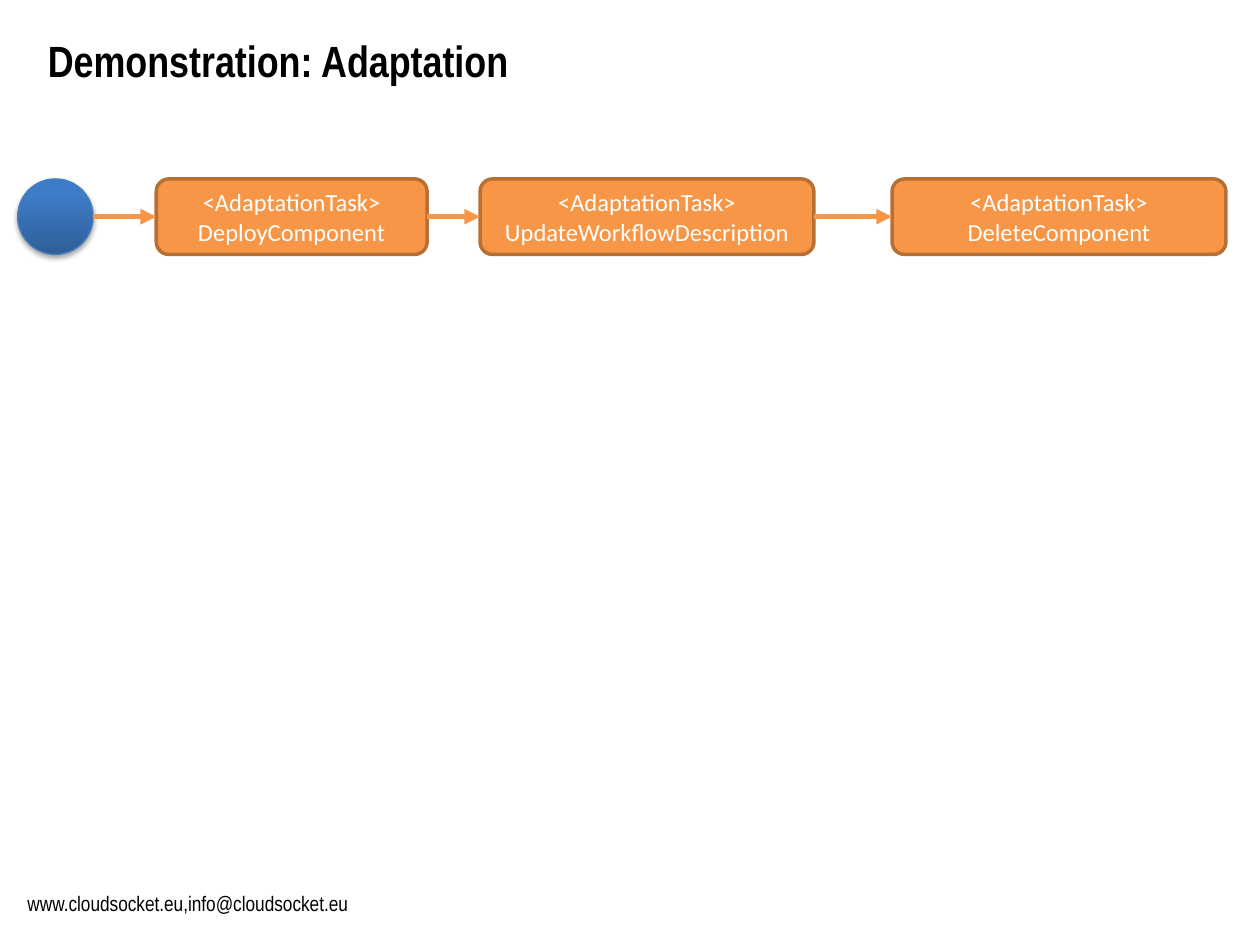
from copy import deepcopy

from lxml import etree
from pptx import Presentation, util as u
from pptx.dml.color import RGBColor
from pptx.enum import shapes, text
from pptx.oxml import parse_xml
from pptx.oxml.ns import nsdecls, qn

HEADING = "Demonstration: Adaptation"
CONTACT = "www.cloudsocket.eu,info@cloudsocket.eu"
TASK_KIND = "<AdaptationTask>"
TASKS = [
    ("DeployComponent", 1.24, 2.15),
    ("UpdateWorkflowDescription", 3.81, 2.65),
    ("DeleteComponent", 7.08, 2.65),
]

ROW_TOP, ROW_HEIGHT = 1.42, 0.6
START_LEFT = 0.14
RIGHT_OF_CIRCLE, RIGHT_OF_TASK, LEFT_OF_TASK = 6, 3, 1

BLACK = RGBColor(0x00, 0x00, 0x00)
WHITE = RGBColor(0xFF, 0xFF, 0xFF)
ORANGE = RGBColor(0xF7, 0x96, 0x46)
BROWN = RGBColor(0xB7, 0x6F, 0x34)
BLUE = RGBColor(0x4B, 0x7E, 0xBC)
BLUE_STOPS = [
    (0, RGBColor(0x2F, 0x5F, 0x99)),
    (0.8, RGBColor(0x3D, 0x7C, 0xC7)),
    (1, RGBColor(0x3A, 0x7C, 0xCB)),
]

HEADING_FONT = {"name": "Arial Narrow", "size": u.Pt(25), "bold": True}
CONTACT_FONT = {"name": "Arial Narrow", "size": u.Pt(12)}
TASK_FONT = {"name": "Calibri", "size": u.Pt(14)}

SHADOW = (
    f'<a:effectLst {nsdecls("a")}>'
    f'<a:outerShdw blurRad="{u.Pt(3.1)}" dist="{u.Pt(1.8)}" dir="5400000" rotWithShape="0">'
    '<a:srgbClr val="000000"><a:alpha val="35000"/></a:srgbClr>'
    "</a:outerShdw></a:effectLst>"
)


def write(frame, lines, font, color, align, anchor):
    frame.word_wrap = True
    frame.auto_size = text.MSO_AUTO_SIZE.NONE
    frame.vertical_anchor = anchor
    frame.text = "\n".join(lines)
    for paragraph in frame.paragraphs:
        paragraph.alignment = align
        for run in paragraph.runs:
            for key, value in font.items():
                setattr(run.font, key, value)
            run.font.color.rgb = color


def add_start(slide):
    start = slide.shapes.add_shape(
        shapes.MSO_SHAPE.OVAL,
        *map(u.Inches, (START_LEFT, ROW_TOP, ROW_HEIGHT, ROW_HEIGHT)),
    )
    start.fill.gradient()
    start.fill.gradient_angle = 90
    stop_list = start._element.spPr.find(".//" + qn("a:gsLst"))
    stop_list.append(deepcopy(stop_list[-1]))
    for stop, (position, color) in zip(start.fill.gradient_stops, BLUE_STOPS):
        stop.position = position
        stop.color.rgb = color
    start.line.color.rgb = BLUE
    start.line.width = u.Pt(0.75)
    start._element.spPr.append(parse_xml(SHADOW))
    return start


def add_task(slide, name, left, width):
    task = slide.shapes.add_shape(
        shapes.MSO_SHAPE.ROUNDED_RECTANGLE,
        *map(u.Inches, (left, ROW_TOP, width, ROW_HEIGHT)),
    )
    task.shadow.inherit = False
    task.fill.solid()
    task.fill.fore_color.rgb = ORANGE
    task.line.color.rgb = BROWN
    task.line.width = u.Pt(2)
    write(task.text_frame, [TASK_KIND, name], TASK_FONT, WHITE,
          text.PP_ALIGN.CENTER, text.MSO_ANCHOR.MIDDLE)
    return task


def add_flow(slide, source, exit_site, target):
    flow = slide.shapes.add_connector(shapes.MSO_CONNECTOR.STRAIGHT, 0, 0, 0, 0)
    flow.begin_connect(source, RIGHT_OF_TASK)
    flow.end_connect(target, LEFT_OF_TASK)
    flow._element.find(".//" + qn("a:stCxn")).set("idx", str(exit_site))
    flow.line.color.rgb = ORANGE
    flow.line.width = u.Pt(3)
    etree.SubElement(flow.line._get_or_add_ln(), qn("a:tailEnd"), type="triangle")
    etree.SubElement(flow._element.spPr, qn("a:effectLst"))


def main():
    deck = Presentation()
    deck.slide_width, deck.slide_height = u.Inches(10), u.Inches(7.5)
    slide = deck.slides.add_slide(deck.slide_layouts[5])

    heading = slide.shapes.title
    heading.left, heading.top, heading.width, heading.height = map(
        u.Inches, (0.28, 0.22, 9.45, 1.01))
    write(heading.text_frame, [HEADING], HEADING_FONT, BLACK,
          text.PP_ALIGN.LEFT, text.MSO_ANCHOR.TOP)

    contact = slide.shapes.add_textbox(*map(u.Inches, (0.12, 6.82, 2.84, 0.5)))
    write(contact.text_frame, [CONTACT], CONTACT_FONT, BLACK,
          text.PP_ALIGN.LEFT, text.MSO_ANCHOR.BOTTOM)

    source, exit_site = add_start(slide), RIGHT_OF_CIRCLE
    for name, left, width in TASKS:
        task = add_task(slide, name, left, width)
        add_flow(slide, source, exit_site, task)
        source, exit_site = task, RIGHT_OF_TASK

    deck.save("out.pptx")


if __name__ == "__main__":
    main()
